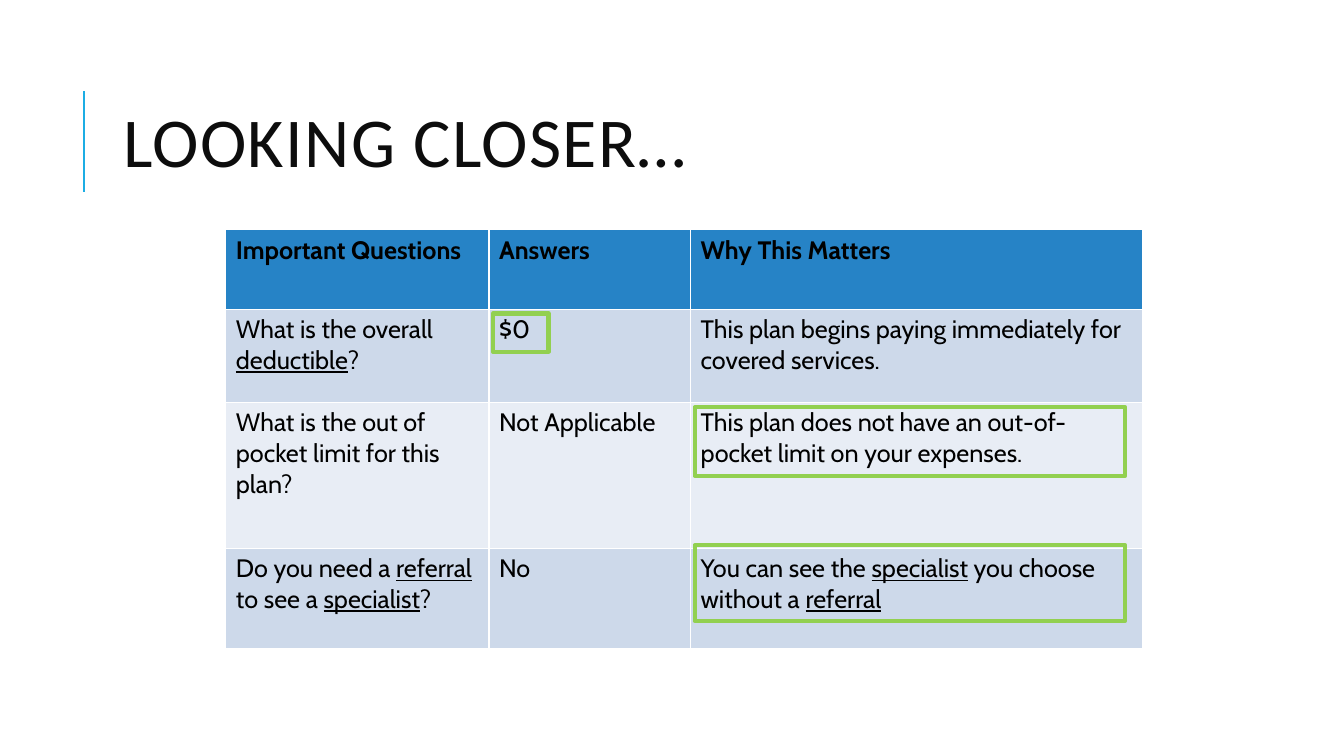
from itertools import accumulate

from pptx import Presentation
from pptx import util as u
from pptx.dml.color import RGBColor
from pptx.enum import shapes, text

WIDTH, HEIGHT = 13.33, 7.5
TABLE_LEFT, TABLE_TOP = 2.24, 2.28
COLUMNS = [2.61, 2, 4.48]
ROWS = [0.79, 0.92, 1.45, 1]
COLUMN_LEFTS = list(accumulate(COLUMNS, initial=TABLE_LEFT))
ROW_TOPS = list(accumulate(ROWS, initial=TABLE_TOP))
HEADER_FILL, BAND_FILLS = "2683C6", ["E8EDF5", "CDD9EA"]

QUESTIONS = [
    ["Important Questions", "Answers", "Why This Matters"],
    ["What is the overall\n_deductible_?", "$0",
     "This plan begins paying immediately for covered services."],
    ["What is the out of pocket limit for this plan?", "Not Applicable",
     "This plan does not have an out-of-pocket limit on your expenses."],
    ["Do you need a _referral_ to see a _specialist_?", "No",
     "You can see the _specialist_ you choose without a _referral_"],
]

# column, row, offset from the row's top, width, height
HIGHLIGHTS = [
    (1, 1, 0.04, 0.55, 0.38),
    (2, 2, 0.05, 4.27, 0.68),
    (2, 3, -0.03, 4.27, 0.75),
]


def color(hex_code):
    return RGBColor.from_string(hex_code)


def box(left, top, width, height):
    return [u.Inches(length) for length in (left, top, width, height)]


def write(frame, content, font="Cabin", size=18, fill="000000", bold=False,
          line_spacing=None, tracking=None):
    """Fill a text frame; words between underscores are underlined."""
    for number, line in enumerate(content.split("\n")):
        paragraph = frame.add_paragraph() if number else frame.paragraphs[0]
        paragraph.alignment = text.PP_ALIGN.LEFT
        paragraph.line_spacing = line_spacing
        for index, part in enumerate(line.split("_")):
            if not part:
                continue
            run = paragraph.add_run()
            run.text = part
            run.font.name, run.font.size = font, u.Pt(size)
            run.font.bold, run.font.underline = bold, index % 2 == 1
            run.font.color.rgb = color(fill)
            if tracking:
                run.font._element.set("spc", str(tracking * 100))


def add_title(slide, content):
    title = slide.shapes.title
    title.left, title.top, title.width, title.height = box(
        1.12, 0.64, 10.63, 1.64)
    title.text_frame.vertical_anchor = text.MSO_ANCHOR.MIDDLE
    title.text_frame.word_wrap = True
    write(title.text_frame, content, font="Calibri", size=50, fill="0D0D0D",
          line_spacing=0.8, tracking=1)


def add_accent_line(slide):
    line = slide.shapes.add_connector(
        shapes.MSO_CONNECTOR.STRAIGHT, *box(0.83, 1.9, 0.83, 0.9))
    line.line.color.rgb = color("1CADE4")
    line.line.width = u.Pt(1.5)
    properties = line._element.spPr
    properties.append(properties.makeelement(
        "{http://schemas.openxmlformats.org/drawingml/2006/main}effectLst"))


def add_question_table(slide):
    table = slide.shapes.add_table(
        len(ROWS), len(COLUMNS),
        *box(TABLE_LEFT, TABLE_TOP, sum(COLUMNS), sum(ROWS))).table
    for column, width in zip(table.columns, COLUMNS):
        column.width = u.Inches(width)
    for index, (row, height) in enumerate(zip(table.rows, ROWS)):
        row.height = u.Inches(height)
        for cell, content in zip(row.cells, QUESTIONS[index]):
            cell.fill.solid()
            cell.fill.fore_color.rgb = color(
                BAND_FILLS[index % 2] if index else HEADER_FILL)
            write(cell.text_frame, content, bold=index == 0)


def add_highlight(slide, column, row, offset, width, height):
    frame = slide.shapes.add_shape(
        shapes.MSO_SHAPE.RECTANGLE,
        *box(COLUMN_LEFTS[column] + 0.04, ROW_TOPS[row] + offset,
             width, height))
    frame.shadow.inherit = False
    frame.fill.background()
    frame.line.color.rgb = color("92D050")
    frame.line.width = u.Pt(3)


def main():
    presentation = Presentation()
    presentation.slide_width = u.Inches(WIDTH)
    presentation.slide_height = u.Inches(HEIGHT)
    slide = presentation.slides.add_slide(presentation.slide_layouts[5])
    add_accent_line(slide)
    add_title(slide, "LOOKING CLOSER…")
    add_question_table(slide)
    for highlight in HIGHLIGHTS:
        add_highlight(slide, *highlight)
    presentation.save("out.pptx")


if __name__ == "__main__":
    main()
